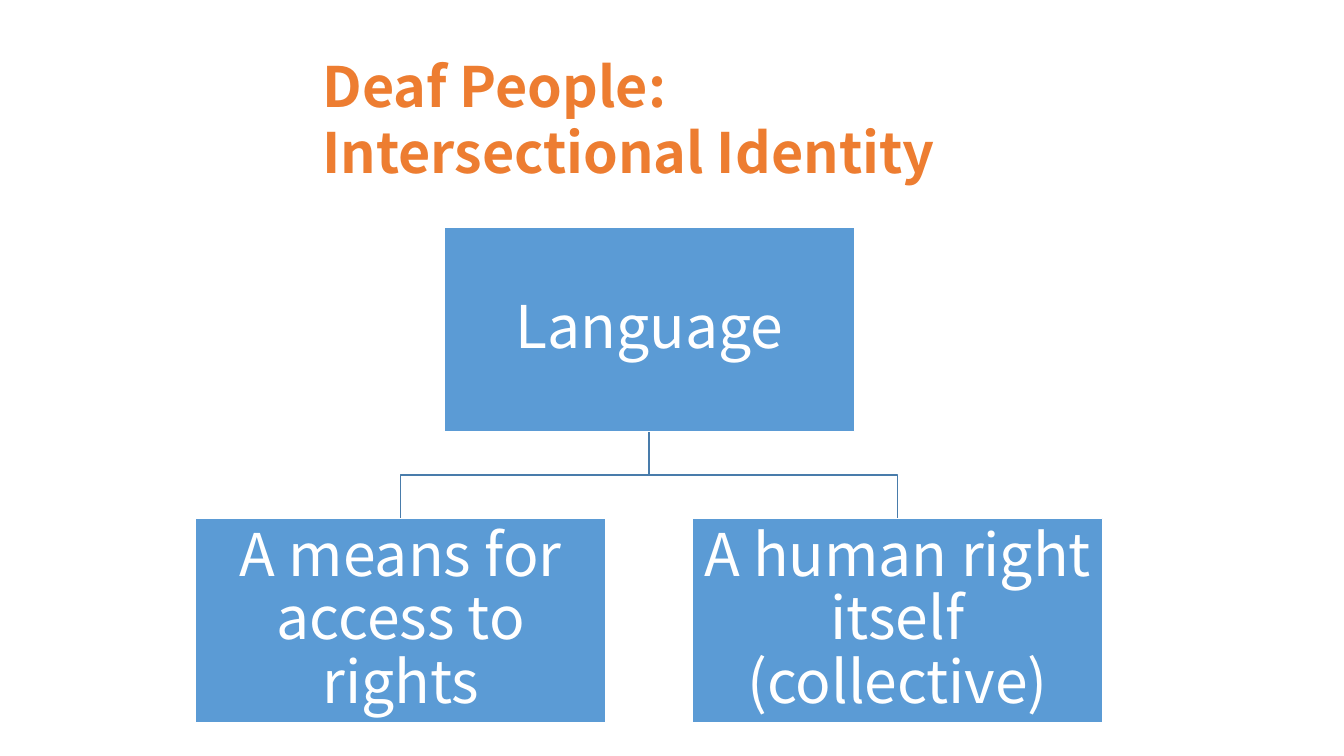
"""Build a slide with a small hierarchy chart about language and Deaf identity."""
from pptx import Presentation
from pptx.dml.color import RGBColor
from pptx.enum.shapes import MSO_SHAPE
from pptx.enum.text import MSO_ANCHOR, MSO_AUTO_SIZE, PP_ALIGN
from pptx.util import Cm, Pt

FONT = "Noto Sans CJK SC"
BOX_WIDTH, BOX_HEIGHT = 10.34, 5.16
ROOT_CENTER, ROOT_TOP = 16.36, 5.72
CHILD_OFFSET, CHILD_TOP = 6.26, 13.06
ROOT_BOTTOM = ROOT_TOP + BOX_HEIGHT
BRANCH_Y = (ROOT_BOTTOM + CHILD_TOP) / 2


def color(value):
    return RGBColor.from_string(value)


def add_span(para, text, size, fill, bold=False):
    span = para.add_run()
    span.text = text
    span.font.name = FONT
    span.font.size = Pt(size)
    span.font.bold = bold
    span.font.color.rgb = color(fill)


deck = Presentation()
deck.slide_width, deck.slide_height = Cm(33.87), Cm(19.05)
page = deck.slides.add_slide(deck.slide_layouts[5])

title = page.shapes.title
title.left, title.top, title.width, title.height = Cm(7.87), Cm(1.17), Cm(18.14), Cm(5.33)
frame = title.text_frame
frame.word_wrap = True
frame.auto_size = MSO_AUTO_SIZE.NONE
frame.vertical_anchor = MSO_ANCHOR.TOP
para = frame.paragraphs[0]
para.alignment = PP_ALIGN.LEFT
para.line_spacing = 1.0
add_span(para, "Deaf People: Intersectional Identity", 39.7, "ED7D31", bold=True)

for child_center in (ROOT_CENTER + CHILD_OFFSET, ROOT_CENTER - CHILD_OFFSET):
    outline = page.shapes.build_freeform(Cm(ROOT_CENTER), Cm(ROOT_BOTTOM))
    outline.add_line_segments([
        (Cm(ROOT_CENTER), Cm(BRANCH_Y)),
        (Cm(child_center), Cm(BRANCH_Y)),
        (Cm(child_center), Cm(CHILD_TOP)),
    ], close=False)
    branch = outline.convert_to_shape()
    branch.shadow.inherit = False
    branch.fill.background()
    branch.line.color.rgb = color("497CAB")
    branch.line.width = Pt(1)

boxes = [
    ("Language", ROOT_CENTER, ROOT_TOP),
    ("A means for access to rights", ROOT_CENTER - CHILD_OFFSET, CHILD_TOP),
    ("A human right itself (collective)", ROOT_CENTER + CHILD_OFFSET, CHILD_TOP),
]
for text, center, top in boxes:
    box = page.shapes.add_shape(MSO_SHAPE.RECTANGLE, Cm(center - BOX_WIDTH / 2), Cm(top),
                                Cm(BOX_WIDTH), Cm(BOX_HEIGHT))
    box.shadow.inherit = False
    box.fill.solid()
    box.fill.fore_color.rgb = color("5B9BD5")
    box.line.color.rgb = color("FFFFFF")
    box.line.width = Pt(1)
    frame = box.text_frame
    frame.word_wrap = True
    frame.vertical_anchor = MSO_ANCHOR.MIDDLE
    frame.margin_left = frame.margin_right = Cm(0.07)
    frame.margin_top = frame.margin_bottom = Cm(0.07)
    para = frame.paragraphs[0]
    para.alignment = PP_ALIGN.CENTER
    para.line_spacing = 0.9
    add_span(para, text, 42, "FFFFFF")

deck.save("out.pptx")
